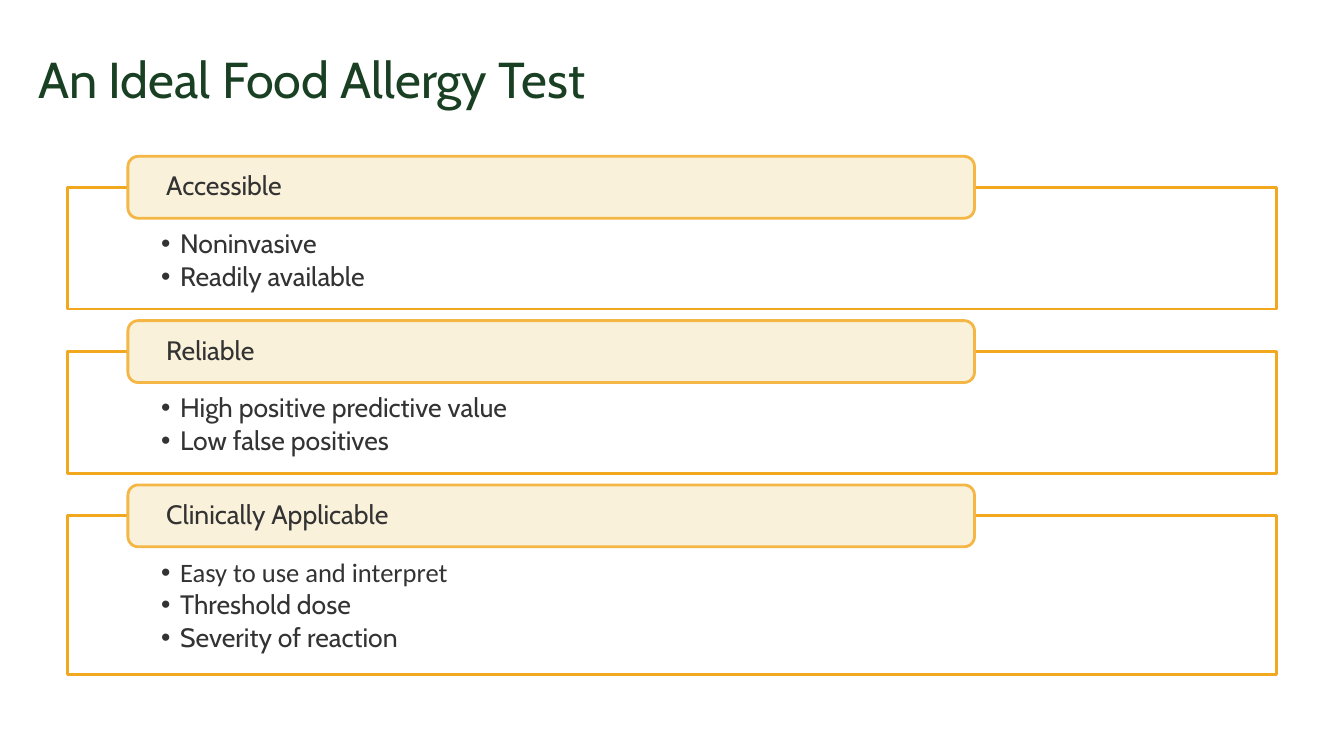
from lxml.etree import SubElement
from pptx import Presentation
from pptx.dml.color import RGBColor
from pptx.enum.shapes import MSO_SHAPE
from pptx.enum.text import MSO_ANCHOR, MSO_AUTO_SIZE, PP_ALIGN
from pptx.oxml.ns import qn
from pptx.util import Cm, Pt

GREEN = RGBColor(0x1A, 0x40, 0x23)
GRAY = RGBColor(0x33, 0x33, 0x33)
WHITE = RGBColor(0xFF, 0xFF, 0xFF)
CREAM = RGBColor(0xFA, 0xF1, 0xDA)
AMBER = RGBColor(0xF1, 0xA7, 0x1E)
GOLD = RGBColor(0xF4, 0xB6, 0x44)

FONT = "Cabin"
GAP = 1.07
TAB = 1.56

GROUPS = [
    ("Accessible", [("Noninvasive", FONT), ("Readily available", FONT)]),
    ("Reliable", [("High positive predictive value", FONT),
                  ("Low false positives", FONT)]),
    ("Clinically Applicable", [("Easy to use and interpret", "Calibri"),
                               ("Threshold dose", FONT),
                               ("Severity of reaction", FONT)]),
]


def add_run(para, text, size, color, font=FONT):
    para.alignment = PP_ALIGN.LEFT
    para.line_spacing = 0.9
    run = para.add_run()
    run.text = text
    run.font.name = font
    run.font.size = Pt(size)
    run.font.color.rgb = color


def add_bullet(para):
    props = para._p.get_or_add_pPr()
    props.set("marL", str(Cm(0.48)))
    props.set("indent", str(-Cm(0.48)))
    SubElement(props, qn("a:buFont"), typeface="Arial")
    SubElement(props, qn("a:buChar"), char="•")


def add_box(slide, kind, box, fill, line, inset):
    shape = slide.shapes.add_shape(kind, *map(Cm, box))
    shape.shadow.inherit = False
    shape.fill.solid()
    shape.fill.fore_color.rgb = fill
    shape.line.color.rgb = line
    shape.line.width = Pt(2)
    frame = shape.text_frame
    frame.word_wrap = True
    frame.margin_left = frame.margin_right = Cm(inset)
    return shape


def add_title(slide, box, text):
    title = slide.shapes.title
    title.left, title.top, title.width, title.height = map(Cm, box)
    frame = title.text_frame
    frame.auto_size = MSO_AUTO_SIZE.NONE
    frame.vertical_anchor = MSO_ANCHOR.MIDDLE
    add_run(frame.paragraphs[0], text, 36, GREEN)


def add_group(slide, box, head, items):
    left, top, width, height = box
    panel = add_box(slide, MSO_SHAPE.RECTANGLE, box, WHITE, AMBER, 2.36)
    tint = panel._element.spPr.find(qn("a:solidFill"))[0]
    SubElement(tint, qn("a:alpha"), val="90000")
    frame = panel.text_frame
    frame.vertical_anchor = MSO_ANCHOR.TOP
    frame.margin_top = Cm(1.09)
    frame.margin_bottom = Cm(0.38)
    for i, (text, font) in enumerate(items):
        para = frame.add_paragraph() if i else frame.paragraphs[0]
        add_bullet(para)
        para.level = 1
        para.space_after = Pt(2.85)
        add_run(para, text, 19, GRAY, font)

    place = (left + width * 0.05, top - TAB / 2, width * 0.7, TAB)
    tab = add_box(slide, MSO_SHAPE.ROUNDED_RECTANGLE, place, CREAM, GOLD, 0.89)
    frame = tab.text_frame
    frame.margin_top = frame.margin_bottom = 0
    frame.vertical_anchor = MSO_ANCHOR.MIDDLE
    add_run(frame.paragraphs[0], head, 19, GRAY)


def main():
    deck = Presentation()
    deck.slide_width = Cm(33.87)
    deck.slide_height = Cm(19.05)
    slide = deck.slides.add_slide(deck.slide_layouts[5])
    add_title(slide, (0.71, 0.48, 32.46, 3.18), "An Ideal Food Allergy Test")
    top = 4.72
    for head, items in GROUPS:
        height = 1.23 + 0.92 * len(items)
        add_group(slide, (1.7, top, 30.48, height), head, items)
        top += height + GAP
    deck.save("out.pptx")


if __name__ == "__main__":
    main()
